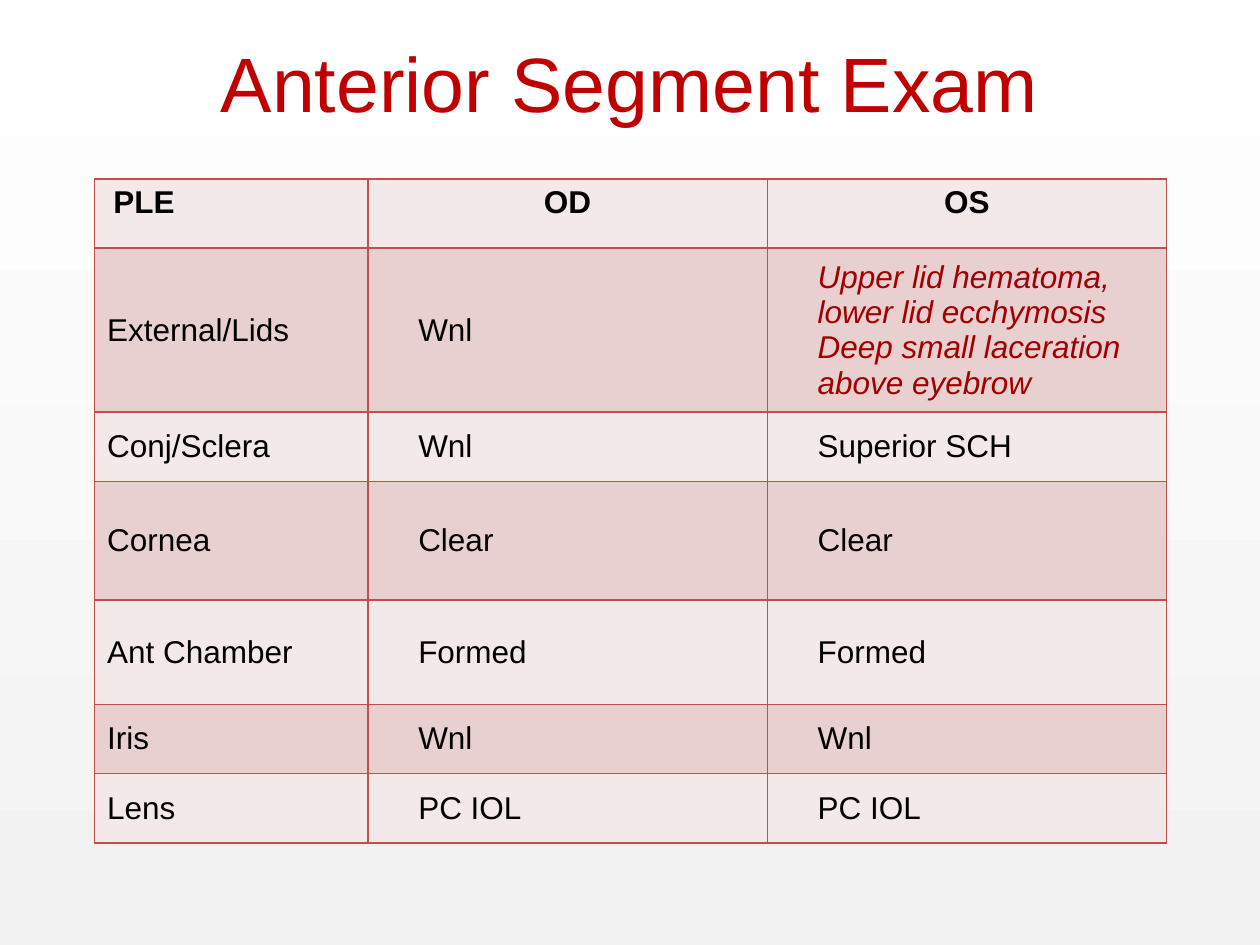
from lxml.etree import SubElement
from pptx import Presentation
from pptx.dml.color import RGBColor
from pptx.enum.shapes import MSO_SHAPE
from pptx.enum.text import MSO_ANCHOR, PP_ALIGN
from pptx.oxml.ns import qn
from pptx.util import Inches, Pt

COLORS = {
    "title": "C00000",
    "text": "000000",
    "finding": "A20000",
    "border": "C0504D",
    "light_row": "F4E9E9",
    "dark_row": "E8D0D0",
    "backdrop_bottom": "F2F2F2",
    "backdrop_top": "FFFFFF",
}
EXAM = [
    ("PLE", "OD", "OS"),
    ("External/Lids", "Wnl",
     "Upper lid hematoma, lower lid ecchymosis\nDeep small laceration above eyebrow"),
    ("Conj/Sclera", "Wnl", "Superior SCH"),
    ("Cornea", "Clear", "Clear"),
    ("Ant Chamber", "Formed", "Formed"),
    ("Iris", "Wnl", "Wnl"),
    ("Lens", "PC IOL", "PC IOL"),
]
COLUMN_WIDTHS = [2.17, 3.17, 3.17]
ROW_HEIGHTS = [0.55, 1.22, 0.55, 0.94, 0.83, 0.55, 0.55]
ABNORMAL = (1, 2)


def rgb(name):
    """Return the named palette colour."""
    return RGBColor.from_string(COLORS[name])


class ExamSlide:
    """Hold the style and the slide being built."""

    font_name = "Arial"
    title_size = 44
    body_size = 18

    def __init__(self, slide):
        """Keep the slide to draw on."""
        self.slide = slide

    def style(self, frame, size, color, align=PP_ALIGN.LEFT, bold=False, italic=False):
        """Format every run of a text frame."""
        for paragraph in frame.paragraphs:
            paragraph.alignment = align
            for run in paragraph.runs:
                run.font.name = self.font_name
                run.font.size = Pt(size)
                run.font.bold = bold
                run.font.italic = italic
                run.font.color.rgb = rgb(color)

    def backdrop(self, width, height):
        """Cover the slide with a vertical gradient."""
        panel = self.slide.shapes.add_shape(MSO_SHAPE.RECTANGLE, 0, 0, width, height)
        panel.shadow.inherit = False
        panel.line.fill.background()
        panel.fill.gradient()
        panel.fill.gradient_angle = 90
        for stop, name in zip(panel.fill.gradient_stops, ("backdrop_bottom", "backdrop_top")):
            stop.color.rgb = rgb(name)

    def title(self, text, left, top, width, height):
        """Add the centred heading."""
        heading = self.slide.shapes.add_textbox(
            Inches(left), Inches(top), Inches(width), Inches(height))
        frame = heading.text_frame
        frame.word_wrap = True
        frame.vertical_anchor = MSO_ANCHOR.MIDDLE
        frame.text = text
        self.style(frame, self.title_size, "title", PP_ALIGN.CENTER)

    def border(self, cell):
        """Draw a thin line on all four sides of a cell."""
        properties = cell._tc.get_or_add_tcPr()
        for side in ("a:lnL", "a:lnR", "a:lnT", "a:lnB"):
            line = SubElement(properties, qn(side), w=str(Pt(1)))
            fill = SubElement(line, qn("a:solidFill"))
            SubElement(fill, qn("a:srgbClr"), val=COLORS["border"])

    def cell(self, cell, text, row, column):
        """Fill and format one table cell by its position."""
        header = row == 0
        abnormal = (row, column) == ABNORMAL
        self.border(cell)
        cell.fill.solid()
        cell.fill.fore_color.rgb = rgb("dark_row" if row % 2 else "light_row")
        cell.vertical_anchor = MSO_ANCHOR.TOP if header else MSO_ANCHOR.MIDDLE
        if header and column == 0:
            cell.margin_left = Inches(0.15)
        elif not header and column > 0:
            cell.margin_left = Inches(0.4)
        cell.text_frame.text = text
        self.style(
            cell.text_frame, self.body_size, "finding" if abnormal else "text",
            PP_ALIGN.CENTER if header and column else PP_ALIGN.LEFT,
            bold=header, italic=abnormal)

    def table(self, rows, left, top, widths, heights):
        """Add the exam table."""
        grid = self.slide.shapes.add_table(
            len(rows), len(widths), Inches(left), Inches(top),
            Inches(sum(widths)), Inches(sum(heights))).table
        for column, width in zip(grid.columns, widths):
            column.width = Inches(width)
        for r, (row, height) in enumerate(zip(rows, heights)):
            grid.rows[r].height = Inches(height)
            for c, text in enumerate(row):
                self.cell(grid.cell(r, c), text, r, c)


def main():
    """Build and save the presentation."""
    deck = Presentation()
    deck.slide_width, deck.slide_height = Inches(10), Inches(7.5)
    exam = ExamSlide(deck.slides.add_slide(deck.slide_layouts[6]))
    exam.backdrop(deck.slide_width, deck.slide_height)
    exam.title("Anterior Segment Exam", 0.5, 0.02, 9, 1.25)
    exam.table(EXAM, 0.75, 1.42, COLUMN_WIDTHS, ROW_HEIGHTS)
    deck.save("out.pptx")


if __name__ == "__main__":
    main()
